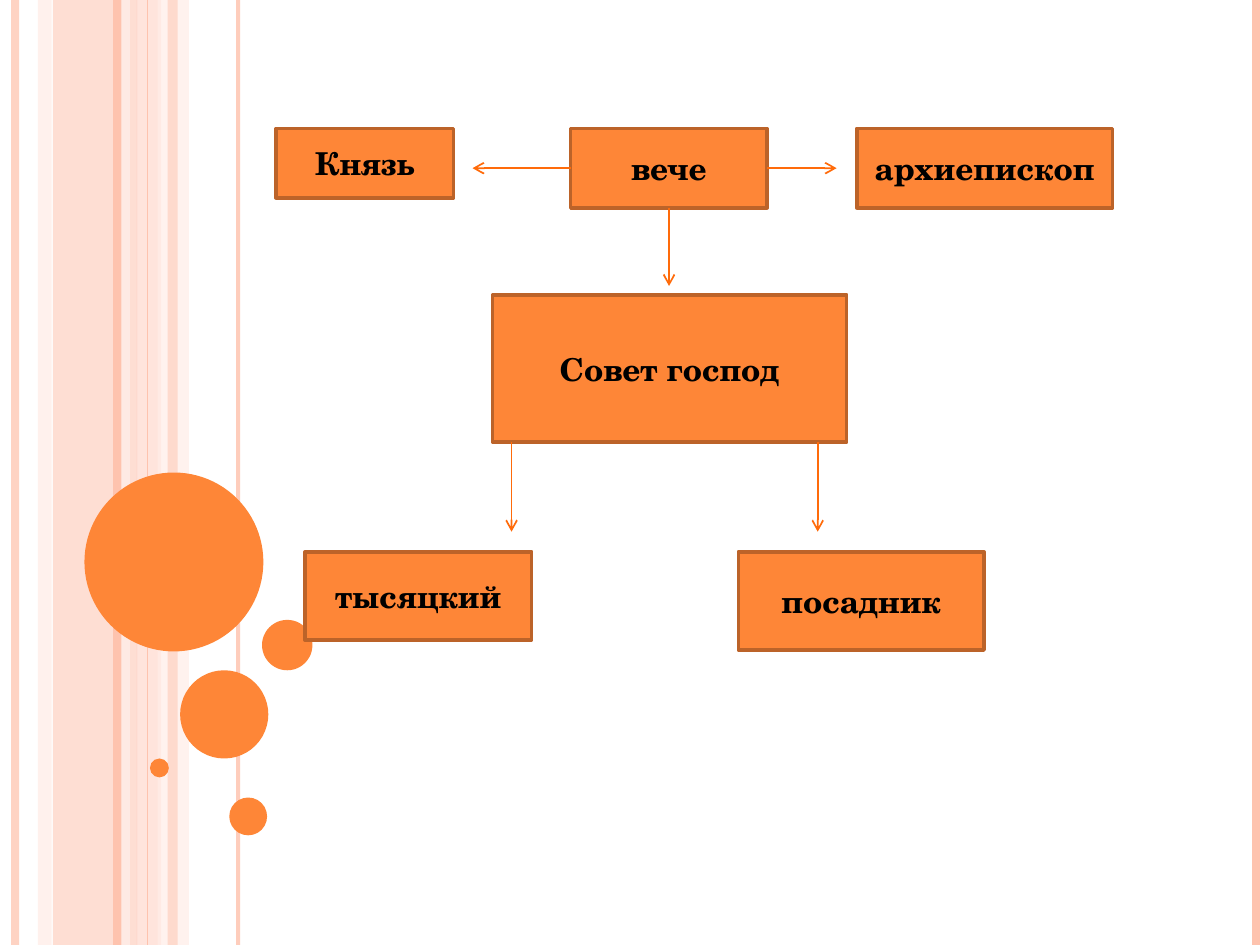
from lxml import etree
from pptx import Presentation, util as u
from pptx.dml.color import RGBColor
from pptx.enum import shapes, text
from pptx.oxml.ns import qn

SLIDE_W, SLIDE_H = 10, 7.5
FONT = "TeX Gyre Schola"
COLORS = {
    "orange": "FE8637", "border": "BC6329", "arrow": "FF6B0A", "text": "000000",
    "peach": "FEC3AE", "light": "FFD9CE", "pale": "FFEDE8",
}

# Full-height background: (left, width, colour, opacity %)
BANDS = [
    (0.42, 0.67, "peach", 54), (0.3, 0.11, "light", 36),
    (1.08, 0.2, "light", 70), (1.25, 0.25, "pale", 71),
]
TOP_BAND = (1.33, 0.08, "peach", 51)
# (x, weight in points, colour, opacity %)
STRIPES = [
    (0.12, 4.5, "peach", 73), (1, 4.5, "pale", 83), (0.93, 4.5, "peach", 100),
    (1.89, 2.25, "peach", 82), (1.17, 0.75, "peach", 100), (9.97, 4.5, "peach", 100),
]
# (left, top, diameter)
BUBBLES = [
    (0.67, 3.75, 1.42), (1.43, 5.32, 0.7), (1.19, 6.02, 0.15),
    (1.82, 6.33, 0.3), (2.08, 4.92, 0.4),
]
# Label: (left, top, width, height)
OFFICES = {
    "Князь": (2.19, 1.02, 1.41, 0.55),
    "вече": (4.53, 1.02, 1.56, 0.63),
    "архиепископ": (6.8, 1.02, 2.03, 0.63),
    "Совет господ": (3.91, 2.34, 2.81, 1.17),
    "тысяцкий": (2.42, 4.38, 1.8, 0.7),
    "посадник": (5.86, 4.38, 1.95, 0.78),
}

prs = Presentation()
prs.slide_width, prs.slide_height = u.Inches(SLIDE_W), u.Inches(SLIDE_H)
slide = prs.slides.add_slide(prs.slide_layouts[6])


def paint(fill, color, opacity=100):
    fill.solid()
    fill.fore_color.rgb = RGBColor.from_string(COLORS[color])
    if opacity < 100:
        for clr in fill._xPr.iter(qn("a:srgbClr")):
            etree.SubElement(clr, qn("a:alpha"), val=str(opacity * 1000))


def add_block(kind, box, color, opacity=100):
    block = slide.shapes.add_shape(kind, *map(u.Inches, box))
    block.shadow.inherit = False
    paint(block.fill, color, opacity)
    block.line.fill.background()
    return block


def add_line(start, end, weight, color, opacity=100, arrow=False):
    line = slide.shapes.add_connector(
        shapes.MSO_CONNECTOR.STRAIGHT, *map(u.Inches, (*start, *end)))
    line.line.width = u.Pt(weight)
    paint(line.line.fill, color, opacity)
    if arrow:
        etree.SubElement(line.line._get_or_add_ln(), qn("a:tailEnd"), type="arrow")
    etree.SubElement(line._element.spPr, qn("a:effectLst"))


def add_band(left, width, color, opacity):
    add_block(shapes.MSO_SHAPE.RECTANGLE, (left, 0, width, SLIDE_H), color, opacity)


# Background bands, stripes and bubbles
for band in BANDS:
    add_band(*band)
for x, weight, color, opacity in STRIPES:
    add_line((x, 0), (x, SLIDE_H), weight, color, opacity)
add_band(*TOP_BAND)
for left, top, diameter in BUBBLES:
    add_block(shapes.MSO_SHAPE.OVAL, (left, top, diameter, diameter), "orange")

# Offices
for label, box in OFFICES.items():
    office = add_block(shapes.MSO_SHAPE.RECTANGLE, box, "orange")
    paint(office.line.fill, "border")
    office.line.width = u.Pt(2)
    frame = office.text_frame
    frame.word_wrap = True
    frame.vertical_anchor = text.MSO_ANCHOR.MIDDLE
    paragraph = frame.paragraphs[0]
    paragraph.text = label
    paragraph.alignment = text.PP_ALIGN.CENTER
    font = paragraph.font
    font.name, font.size, font.bold = FONT, u.Pt(18), True
    font.color.rgb = RGBColor.from_string(COLORS["text"])

# Arrows leave the edges of the assembly and the council
left, top, width, height = OFFICES["вече"]
right, middle, center, bottom = left + width, top + height / 2, left + width / 2, top + height
council_left, council_top, council_width, council_height = OFFICES["Совет господ"]
council_bottom = council_top + council_height
arrows = [
    ((left, middle), (3.75, middle)),
    ((right, middle), (6.64, middle)),
    ((center, bottom), (center, 2.27)),
]
arrows += [((x, council_bottom), (x, 4.22)) for x in (4.06, 6.49)]
for start, end in arrows:
    add_line(start, end, 1, "arrow", arrow=True)

prs.save("out.pptx")
